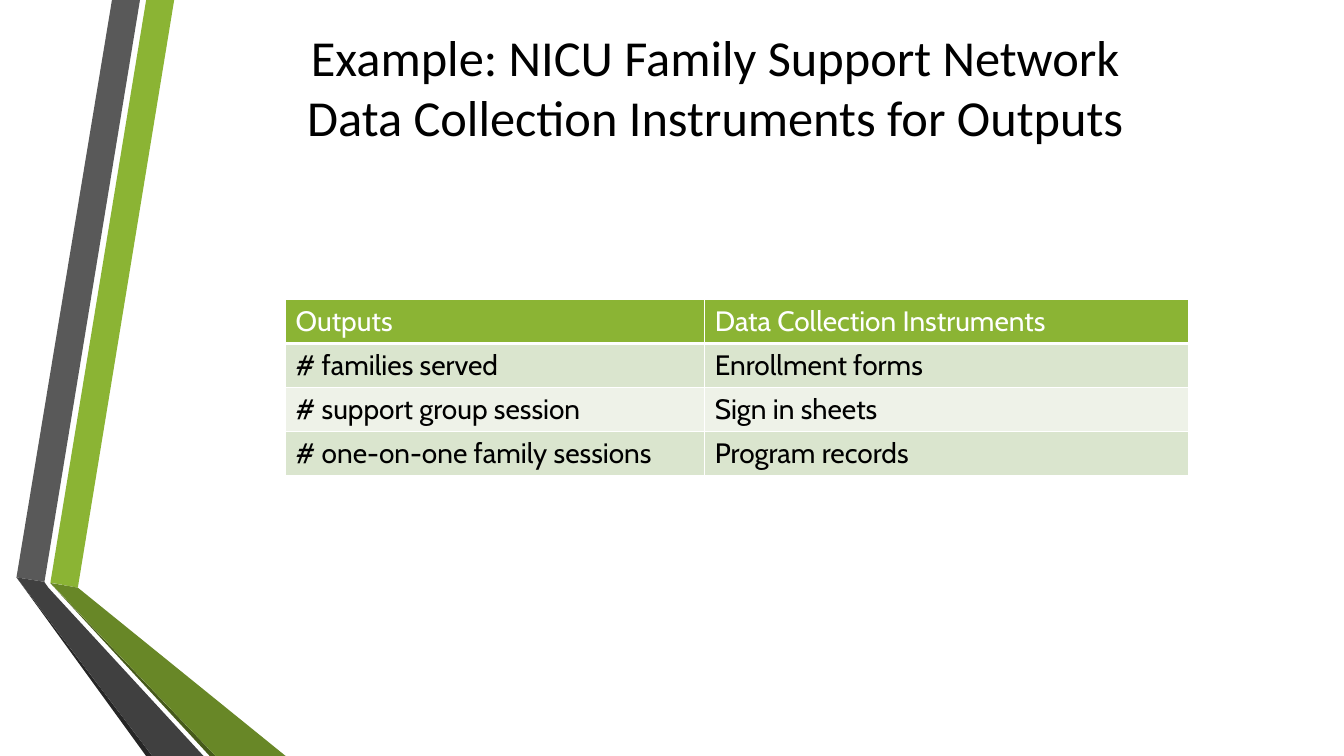
import dataclasses

import pptx
import pptx.dml.color
import pptx.enum.text
import pptx.oxml
import pptx.oxml.ns
import pptx.util

Pt = pptx.util.Pt


@dataclasses.dataclass(frozen=True)
class Theme:
    green: str = "8BB434"
    green_dark: str = "688727"
    green_deep: str = "465A1A"
    gray: str = "595959"
    gray_dark: str = "404040"
    gray_deep: str = "262626"
    band: str = "DAE5CE"
    band_light: str = "EEF2E8"
    white: str = "FFFFFF"
    black: str = "000000"
    title_font: str = "Calibri"
    table_font: str = "Cabin"
    title_size: int = 36
    table_size: int = 20


THEME = Theme()

RIBBONS = [
    (THEME.green, [(36, 416.2), (55.6, 419.8), (124.4, 0), (104.4, 0)]),
    (THEME.gray, [(100, 0), (80, 0), (11.8, 412.4), (31.8, 415.6)]),
    (THEME.gray_deep, [(11.8, 412.4), (104.4, 540), (108.8, 540)]),
    (THEME.green_deep, [(36, 416.6), (149.8, 540), (154, 540)]),
    (THEME.green_dark, [(36, 416.4), (154, 540), (204, 540), (55.6, 419.8)]),
    (THEME.gray_dark, [(145.4, 540), (34.6, 419.8), (31.6, 415.6), (11.8, 412.4), (108.8, 540)]),
]

TITLE_LINES = [
    "Example: NICU Family Support Network",
    "Data Collection Instruments for Outputs",
]

ROWS = [
    ("Outputs", "Data Collection Instruments"),
    ("# families served", "Enrollment forms"),
    ("# support group session", "Sign in sheets"),
    ("# one-on-one family sessions", "Program records"),
]


def rgb(color):
    return pptx.dml.color.RGBColor.from_string(color)


def add_run(p, text, font, size, color):
    r = p.add_run()
    r.text = text
    r.font.name = font
    r.font.size = Pt(size)
    r.font.color.rgb = rgb(color)


def add_ribbon(s, color, points):
    corners = [(Pt(x), Pt(y)) for x, y in points]
    builder = s.shapes.build_freeform(*corners[0], scale=1.0)
    builder.add_line_segments(corners[1:], close=True)
    sp = builder.convert_to_shape()
    sp.shadow.inherit = False
    sp.fill.solid()
    sp.fill.fore_color.rgb = rgb(color)
    sp.line.fill.background()


def add_title(s, lines):
    sp = s.shapes.add_textbox(Pt(116.6), Pt(24.5), Pt(789), Pt(74))
    tf = sp.text_frame
    tf.word_wrap = True
    tf.vertical_anchor = pptx.enum.text.MSO_ANCHOR.MIDDLE
    p = tf.paragraphs[0]
    p.alignment = pptx.enum.text.PP_ALIGN.CENTER
    for i, line in enumerate(lines):
        if i:
            p.add_line_break()
        add_run(p, line, THEME.title_font, THEME.title_size, THEME.black)


def set_borders(cell, bottom):
    tcPr = cell._tc.get_or_add_tcPr()
    for side, width in (("L", 1), ("R", 1), ("T", 1), ("B", bottom)):
        tcPr.append(pptx.oxml.parse_xml(
            f'<a:ln{side} {pptx.oxml.ns.nsdecls("a")} w="{Pt(width)}"><a:solidFill>'
            f'<a:srgbClr val="{THEME.white}"/></a:solidFill></a:ln{side}>'
        ))


def fill_cell(cell, text, fill, color, bottom):
    set_borders(cell, bottom)
    cell.fill.solid()
    cell.fill.fore_color.rgb = rgb(fill)
    add_run(cell.text_frame.paragraphs[0], text, THEME.table_font, THEME.table_size, color)


def add_outputs_table(s, rows):
    widths = (299.4, 345.6)
    row_height = 31.4
    frame = s.shapes.add_table(len(rows), len(widths), Pt(204), Pt(214),
                               Pt(sum(widths)), Pt(row_height * len(rows)))
    table = frame.table
    for column, width in zip(table.columns, widths):
        column.width = Pt(width)
    for i, texts in enumerate(rows):
        table.rows[i].height = Pt(row_height)
        if i == 0:
            style = (THEME.green, THEME.white, 3)
        else:
            style = (THEME.band if i % 2 else THEME.band_light, THEME.black, 1)
        for j, text in enumerate(texts):
            fill_cell(table.cell(i, j), text, *style)


def main():
    prs = pptx.Presentation()
    prs.slide_width, prs.slide_height = Pt(960), Pt(540)
    s = prs.slides.add_slide(prs.slide_layouts[6])
    for color, points in RIBBONS:
        add_ribbon(s, color, points)
    add_title(s, TITLE_LINES)
    add_outputs_table(s, ROWS)
    prs.save("out.pptx")


if __name__ == "__main__":
    main()
